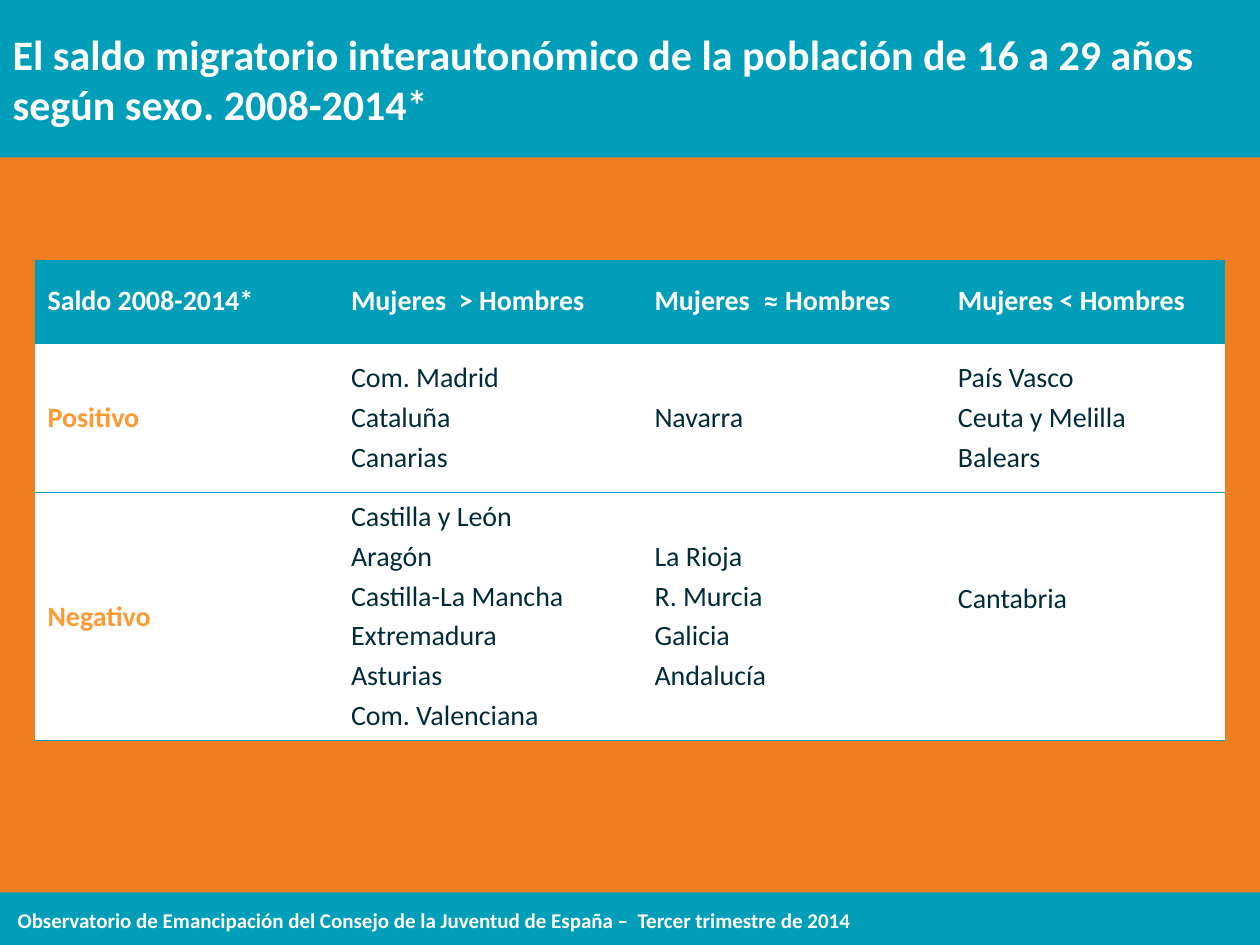
from lxml import etree
from pptx import Presentation
from pptx.dml.color import RGBColor
from pptx.enum.shapes import MSO_SHAPE
from pptx.enum.text import MSO_ANCHOR, MSO_AUTO_SIZE, PP_ALIGN
from pptx.oxml.ns import qn
from pptx.util import Pt

RECTANGLE = MSO_SHAPE.RECTANGLE
MIDDLE = MSO_ANCHOR.MIDDLE
LEFT = PP_ALIGN.LEFT
NO_AUTOFIT = MSO_AUTO_SIZE.NONE

TEAL = RGBColor(0x00, 0x9E, 0xB8)
ORANGE = RGBColor(0xEE, 0x7E, 0x1F)
LABEL_ORANGE = RGBColor(0xFF, 0x99, 0x33)
DARK = RGBColor(0x00, 0x2C, 0x3A)
WHITE = RGBColor(0xFF, 0xFF, 0xFF)

BODY_FONT = "Calibri"
SYMBOL_FONT = "Cambria"
SYMBOL = "≈ "

TITLE = "El saldo migratorio interautonómico de la población de 16 a 29 años según sexo. 2008-2014*"
FOOTER = "Observatorio de Emancipación del Consejo de la Juventud de España –  Tercer trimestre de 2014"
BALANCE_ROWS = [
    ["Saldo 2008-2014*", "Mujeres  > Hombres", "Mujeres  ≈ Hombres", "Mujeres < Hombres"],
    ["Positivo", "Com. Madrid\nCataluña\nCanarias", "Navarra",
     "País Vasco\nCeuta y Melilla\nBalears"],
    ["Negativo",
     "Castilla y León\nAragón\nCastilla-La Mancha\nExtremadura\nAsturias\nCom. Valenciana",
     "La Rioja\nR. Murcia\nGalicia\nAndalucía", "Cantabria"],
]
COLUMN_SHARES = [2.41, 2.41, 2.41, 2.22]
ROW_SHARES = [0.66, 1.19, 1.97]


def add_run(paragraph, text, size, color, bold, font):
    run = paragraph.add_run()
    run.text = text
    run.font.name = font
    run.font.size = Pt(size)
    run.font.bold = bold
    run.font.color.rgb = color


def write_text(frame, text, *, size, color=WHITE, bold=True, spacing=0):
    frame.word_wrap = True
    for index, line in enumerate(text.split("\n")):
        paragraph = frame.paragraphs[0] if index == 0 else frame.add_paragraph()
        paragraph.alignment = LEFT
        paragraph.space_before = Pt(spacing if index else 0)
        before, symbol, after = line.partition(SYMBOL)
        for part, font in ((before, BODY_FONT), (symbol, SYMBOL_FONT), (after, BODY_FONT)):
            if part:
                add_run(paragraph, part, size, color, bold, font)


def set_borders(cell, color, width):
    properties = cell._tc.get_or_add_tcPr()
    for side in ("lnL", "lnR", "lnT"):
        line = etree.SubElement(properties, qn(f"a:{side}"), w="0")
        etree.SubElement(line, qn("a:noFill"))
    bottom = etree.SubElement(properties, qn("a:lnB"), w=str(Pt(width)))
    fill = etree.SubElement(bottom, qn("a:solidFill"))
    etree.SubElement(fill, qn("a:srgbClr"), val=str(color))


def place_title(slide, left, top, width, height):
    title = slide.shapes.title
    title.left, title.top, title.width, title.height = map(Pt, (left, top, width, height))
    title.fill.solid()
    title.fill.fore_color.rgb = TEAL
    frame = title.text_frame
    frame.auto_size = NO_AUTOFIT
    frame.vertical_anchor = MIDDLE
    write_text(frame, TITLE, size=24)


def place_footer(slide, left, top, width, height):
    band = slide.shapes.add_shape(RECTANGLE, Pt(left), Pt(top), Pt(width), Pt(height))
    band.shadow.inherit = False
    band.fill.solid()
    band.fill.fore_color.rgb = TEAL
    band.line.fill.background()
    caption = slide.shapes.add_textbox(Pt(left + 3), Pt(top + 5), Pt(556), Pt(21.6))
    caption.text_frame.vertical_anchor = MIDDLE
    write_text(caption.text_frame, FOOTER, size=12)


def place_balance_table(slide, left, top, width, height):
    table = slide.shapes.add_table(
        len(ROW_SHARES), len(COLUMN_SHARES), Pt(left), Pt(top), Pt(width), Pt(height)
    ).table
    table.horz_banding = False
    for column, share in zip(table.columns, COLUMN_SHARES):
        column.width = Pt(width * share / sum(COLUMN_SHARES))
    for row, share in zip(table.rows, ROW_SHARES):
        row.height = Pt(height * share / sum(ROW_SHARES))
    for row_index, texts in enumerate(BALANCE_ROWS):
        for column_index, text in enumerate(texts):
            cell = table.cell(row_index, column_index)
            is_header = row_index == 0
            is_label = column_index == 0
            set_borders(cell, TEAL, 1)
            cell.fill.solid()
            cell.fill.fore_color.rgb = TEAL if is_header else WHITE
            cell.vertical_anchor = MIDDLE
            cell.margin_left = cell.margin_right = Pt(7.2)
            cell.margin_top = cell.margin_bottom = Pt(3.6)
            color = WHITE if is_header else LABEL_ORANGE if is_label else DARK
            write_text(cell.text_frame, text, size=16, color=color,
                       bold=is_header or is_label, spacing=3.2)
    table.cell(2, 3).margin_bottom = Pt(24.2)


def main():
    presentation = Presentation()
    presentation.slide_width = Pt(720)
    presentation.slide_height = Pt(540)
    slide = presentation.slides.add_slide(presentation.slide_layouts[5])
    slide.background.fill.solid()
    slide.background.fill.fore_color.rgb = ORANGE
    place_footer(slide, 0, 510, 720, 30)
    place_title(slide, 0, 0, 720, 90)
    place_balance_table(slide, 20, 148.5, 680, 274.6)
    presentation.save("out.pptx")


if __name__ == "__main__":
    main()
